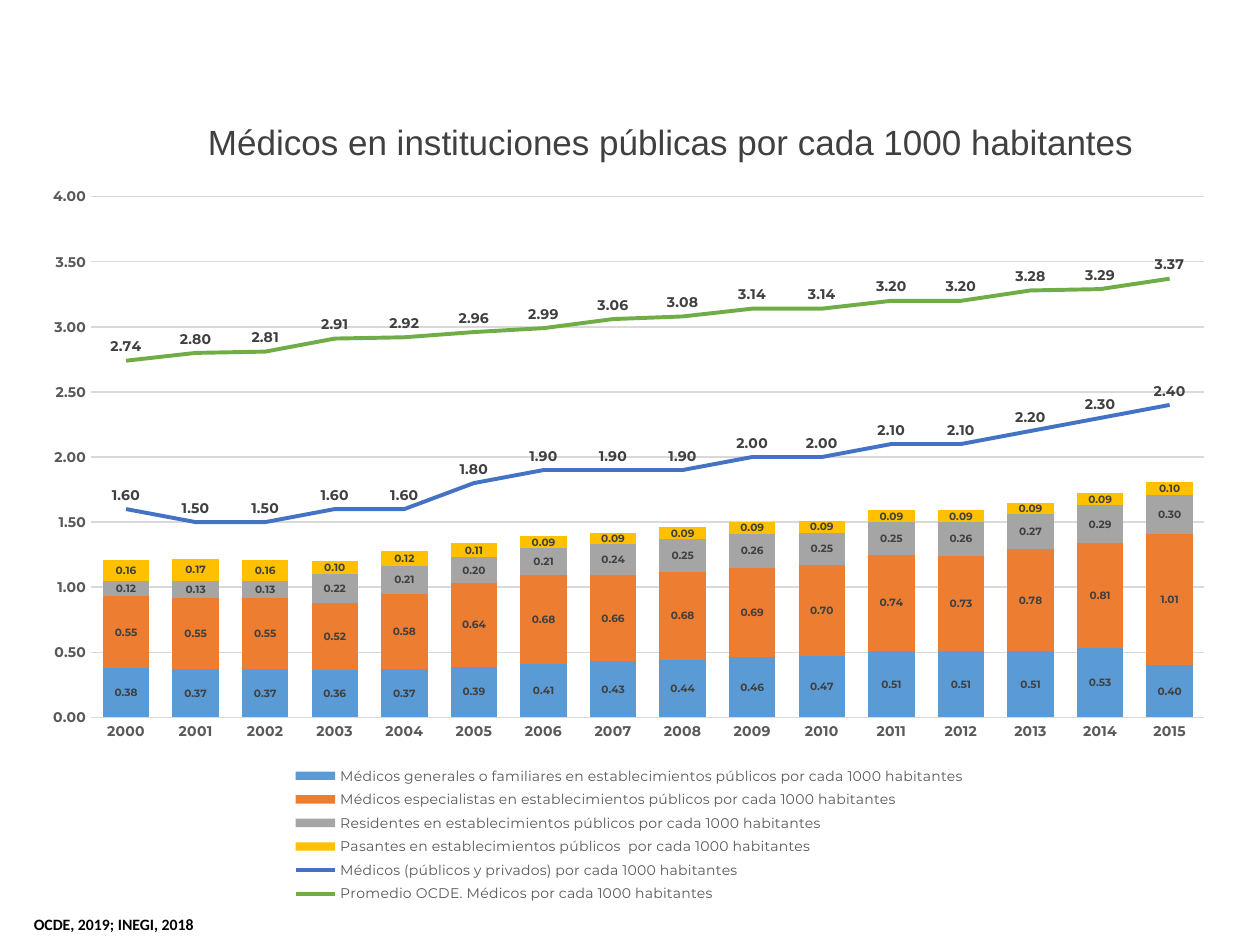
import pptx
import pptx.chart.data
import pptx.dml.color
import pptx.enum.chart
import pptx.enum.text
import pptx.oxml
import pptx.oxml.ns
import pptx.util

RGBColor = pptx.dml.color.RGBColor
Pt = pptx.util.Pt
LabelPosition = pptx.enum.chart.XL_LABEL_POSITION

BLACK = RGBColor(0x00, 0x00, 0x00)
DARK_GRAY = RGBColor(0x40, 0x40, 0x40)
MID_GRAY = RGBColor(0x59, 0x59, 0x59)
GRID_GRAY = RGBColor(0xD9, 0xD9, 0xD9)
BLUE = RGBColor(0x5B, 0x9B, 0xD5)
ORANGE = RGBColor(0xED, 0x7D, 0x31)
GRAY = RGBColor(0xA5, 0xA5, 0xA5)
YELLOW = RGBColor(0xFF, 0xC0, 0x00)
NAVY = RGBColor(0x44, 0x72, 0xC4)
GREEN = RGBColor(0x70, 0xAD, 0x47)

CHART_FONT = "Montserrat"
WIDTH, HEIGHT = pptx.util.Inches(10), pptx.util.Inches(7.5)
YEARS = [str(year) for year in range(2000, 2016)]

STACKED = [
    ("Médicos generales o familiares en establecimientos públicos por cada 1000 habitantes", BLUE,
     [0.38, 0.37, 0.37, 0.36, 0.37, 0.39, 0.41, 0.43,
      0.44, 0.46, 0.47, 0.51, 0.51, 0.51, 0.53, 0.40]),
    ("Médicos especialistas en establecimientos públicos por cada 1000 habitantes", ORANGE,
     [0.55, 0.55, 0.55, 0.52, 0.58, 0.64, 0.68, 0.66,
      0.68, 0.69, 0.70, 0.74, 0.73, 0.78, 0.81, 1.01]),
    ("Residentes en establecimientos públicos por cada 1000 habitantes", GRAY,
     [0.12, 0.13, 0.13, 0.22, 0.21, 0.20, 0.21, 0.24,
      0.25, 0.26, 0.25, 0.25, 0.26, 0.27, 0.29, 0.30]),
    ("Pasantes en establecimientos públicos  por cada 1000 habitantes", YELLOW,
     [0.16, 0.17, 0.16, 0.10, 0.12, 0.11, 0.09, 0.09,
      0.09, 0.09, 0.09, 0.09, 0.09, 0.09, 0.09, 0.10]),
]
LINES = [
    ("Médicos (públicos y privados) por cada 1000 habitantes", NAVY,
     [1.6, 1.5, 1.5, 1.6, 1.6, 1.8, 1.9, 1.9, 1.9, 2.0, 2.0, 2.1, 2.1, 2.2, 2.3, 2.4]),
    ("Promedio OCDE. Médicos por cada 1000 habitantes", GREEN,
     [2.74, 2.80, 2.81, 2.91, 2.92, 2.96, 2.99, 3.06,
      3.08, 3.14, 3.14, 3.20, 3.20, 3.28, 3.29, 3.37]),
]


def share(left, top, width, height):
    """Turn shares of the slide into lengths."""
    return int(left * WIDTH), int(top * HEIGHT), int(width * WIDTH), int(height * HEIGHT)


def set_font(font, size, color, bold=False, name=CHART_FONT):
    font.name, font.size, font.bold = name, Pt(size), bold
    font.color.rgb = color


def write(shape, text, *, size, color, name, bold=False, wrap=True):
    frame = shape.text_frame
    frame.text = text
    frame.word_wrap = wrap
    frame.auto_size = pptx.enum.text.MSO_AUTO_SIZE.NONE
    frame.vertical_anchor = pptx.enum.text.MSO_ANCHOR.TOP
    paragraph = frame.paragraphs[0]
    paragraph.alignment = pptx.enum.text.PP_ALIGN.LEFT
    paragraph.line_spacing = 1
    paragraph.space_before = Pt(0)
    set_font(paragraph.runs[0].font, size, color, bold, name)


def add_title(slide, text):
    title = slide.shapes.title
    title.left, title.top, title.width, title.height = share(0.155, 0.121, 0.757, 0.059)
    write(title, text, size=20, color=DARK_GRAY, name="Arial")


def add_source(slide, text):
    box = slide.shapes.add_textbox(*share(0.017, 0.961, 0.15, 0.033))
    write(box, text, size=9, color=BLACK, name="Calibri", bold=True, wrap=False)


def move_to_lines(chart, count):
    """Move the last series of the column plot to a line plot on the same axes."""
    columns = chart.plots[0]._element
    axes = columns.findall(pptx.oxml.ns.qn("c:axId"))
    axis_ids = "".join(f'<c:axId val="{axis.get("val")}"/>' for axis in axes)
    lines = pptx.oxml.parse_xml(
        f'<c:lineChart {pptx.oxml.ns.nsdecls("c")}><c:grouping val="standard"/>'
        f'<c:varyColors val="0"/><c:marker val="1"/>{axis_ids}</c:lineChart>')
    marker = lines.find(pptx.oxml.ns.qn("c:marker"))
    for series in columns.findall(pptx.oxml.ns.qn("c:ser"))[-count:]:
        for invert in series.findall(pptx.oxml.ns.qn("c:invertIfNegative")):
            series.remove(invert)
        marker.addprevious(series)
    columns.addnext(lines)


def layout(left, top, width, height, inner=False):
    """Manual layout in shares of the chart."""
    target = '<c:layoutTarget val="inner"/>' if inner else ""
    sizes = zip("xywh", (left, top, width, height))
    return pptx.oxml.parse_xml(
        f'<c:layout {pptx.oxml.ns.nsdecls("c")}><c:manualLayout>{target}'
        '<c:xMode val="edge"/><c:yMode val="edge"/>'
        + "".join(f'<c:{key} val="{value}"/>' for key, value in sizes)
        + "</c:manualLayout></c:layout>")


def label(series, size, position):
    labels = series.data_labels
    labels.show_value = True
    labels.number_format, labels.number_format_is_linked = "0.00", False
    labels.position = position
    set_font(labels.font, size, DARK_GRAY, bold=True)


def format_series(chart):
    columns, lines = chart.plots
    columns.gap_width, columns.overlap = 50, 100
    columns.vary_by_categories = False
    for series, (_, color, _) in zip(columns.series, STACKED):
        series.format.fill.solid()
        series.format.fill.fore_color.rgb = color
        label(series, 6, LabelPosition.CENTER)
    for series, (_, color, _) in zip(lines.series, LINES):
        series.format.line.color.rgb = color
        series.format.line.width = Pt(2.25)
        series.marker.style = pptx.enum.chart.XL_MARKER_STYLE.NONE
        series.smooth = False
        label(series, 8, LabelPosition.ABOVE)


def format_axes(chart):
    years, rate = chart.category_axis, chart.value_axis
    for axis in (years, rate):
        axis.major_tick_mark = axis.minor_tick_mark = pptx.enum.chart.XL_TICK_MARK.NONE
        set_font(axis.tick_labels.font, 8, MID_GRAY, bold=True)
    rate.minimum_scale, rate.maximum_scale, rate.major_unit = 0, 4, 0.5
    rate.tick_labels.number_format = "0.00"
    rate.tick_labels.number_format_is_linked = False
    rate.has_major_gridlines = True
    rate.format.line.fill.background()
    for line in (years.format.line, rate.major_gridlines.format.line):
        line.color.rgb = GRID_GRAY
        line.width = Pt(0.75)


def place_parts(chart):
    chart.has_legend = True
    legend = chart.legend
    legend.position = pptx.enum.chart.XL_LEGEND_POSITION.BOTTOM
    legend.include_in_layout = False
    set_font(legend.font, 8, MID_GRAY)
    for old in legend._element.findall(pptx.oxml.ns.qn("c:layout")):
        legend._element.remove(old)
    legend_position = legend._element.find(pptx.oxml.ns.qn("c:legendPos"))
    legend_position.addnext(layout(0.21, 0.8, 0.58, 0.2))
    plot_area = chart.plots[0]._element.getparent()
    for old in plot_area.findall(pptx.oxml.ns.qn("c:layout")):
        plot_area.remove(old)
    plot_area.insert(0, layout(0.05, 0.03, 0.93, 0.71, inner=True))


def add_doctors_chart(slide):
    data = pptx.chart.data.CategoryChartData(number_format="0.00")
    data.categories = YEARS
    for name, _, values in STACKED + LINES:
        data.add_series(name, values)
    chart = slide.shapes.add_chart(
        pptx.enum.chart.XL_CHART_TYPE.COLUMN_STACKED,
        *share(0.025, 0.185, 0.95, 0.776), data).chart
    chart.has_title = False
    set_font(chart.font, 8, BLACK)
    move_to_lines(chart, len(LINES))
    format_series(chart)
    format_axes(chart)
    place_parts(chart)


def main():
    deck = pptx.Presentation()
    deck.slide_width, deck.slide_height = WIDTH, HEIGHT
    slide = deck.slides.add_slide(deck.slide_layouts.get_by_name("Title Only"))
    add_source(slide, "OCDE, 2019; INEGI, 2018")
    add_doctors_chart(slide)
    add_title(slide, "Médicos en instituciones públicas por cada 1000 habitantes")
    deck.save("out.pptx")


if __name__ == "__main__":
    main()
